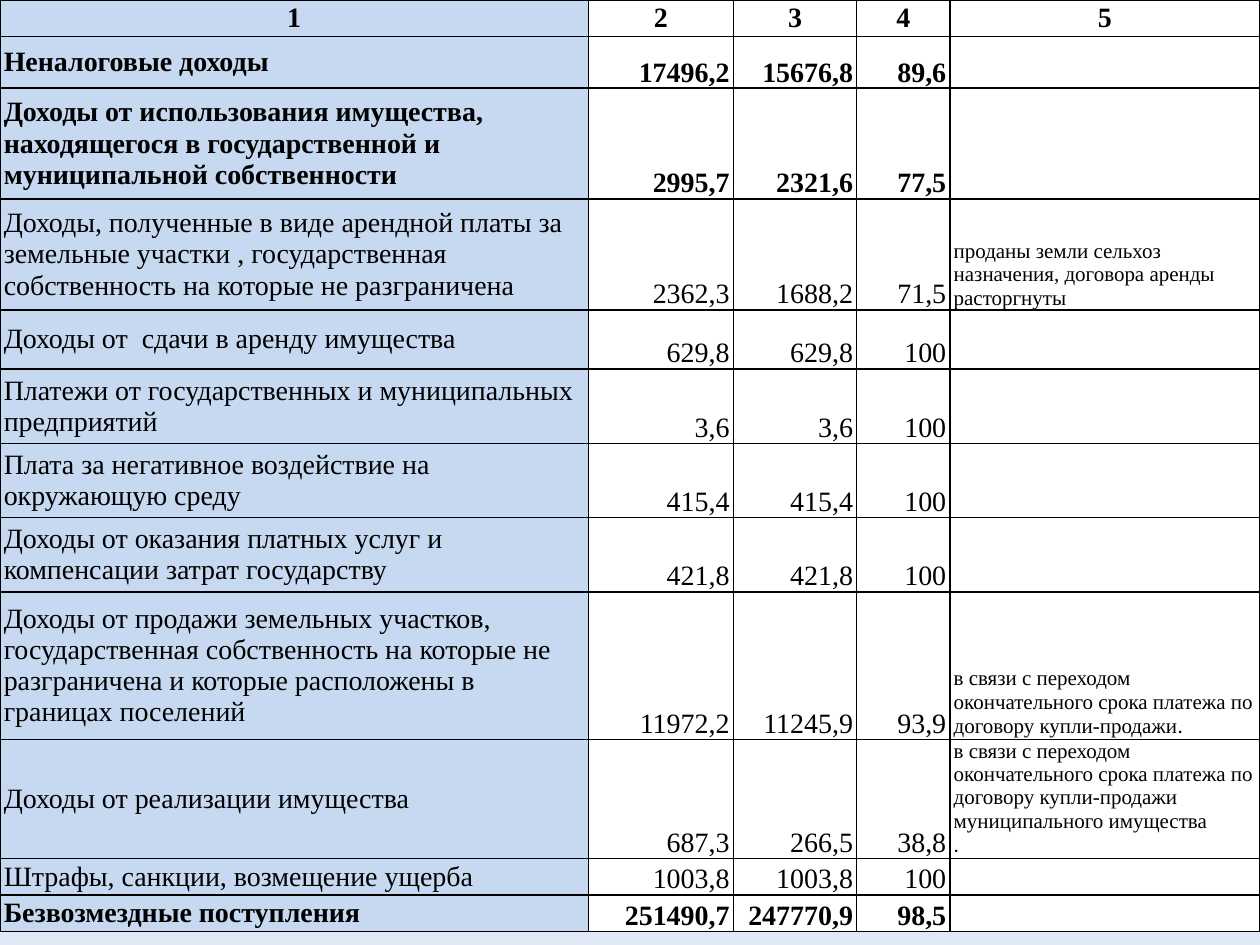
from lxml.etree import SubElement
from copy import deepcopy
from pptx import Presentation
from pptx.dml.color import RGBColor
from pptx.enum.text import MSO_ANCHOR, PP_ALIGN
from pptx.oxml.ns import qn
from pptx.util import Inches, Pt

BLACK = RGBColor(0x00, 0x00, 0x00)
WHITE = RGBColor(0xFF, 0xFF, 0xFF)
BLUE = RGBColor(0xC6, 0xD9, 0xF1)
SKY = [RGBColor(0x9A, 0xB5, 0xE4), RGBColor(0xC2, 0xD1, 0xED), RGBColor(0xE1, 0xE8, 0xF5)]
SERIF = "Times New Roman"
COLS = [4.67, 1.15, 0.98, 0.74, 2.46]
PAD = {"margin_left": Inches(0.03), "margin_right": Inches(0.03),
       "margin_top": 0, "margin_bottom": 0}
DELAY = "в связи с переходом окончательного срока платежа по договору купли-продажи"

ROWS = [
    (0.29, True, ["1", "2", "3", "4", "5"]),
    (0.41, True, ["Неналоговые доходы", "17496,2", "15676,8", "89,6", ""]),
    (0.88, True, ["Доходы от использования имущества, находящегося в государственной и "
                  "муниципальной собственности", "2995,7", "2321,6", "77,5", ""]),
    (0.88, False, ["Доходы, полученные в виде арендной платы за земельные участки , "
                   "государственная собственность на которые не разграничена",
                   "2362,3", "1688,2", "71,5",
                   "проданы земли сельхоз назначения, договора аренды расторгнуты"]),
    (0.47, False, ["Доходы от  сдачи в аренду имущества", "629,8", "629,8", "100", ""]),
    (0.59, False, ["Платежи от государственных и муниципальных предприятий",
                   "3,6", "3,6", "100", ""]),
    (0.59, False, ["Плата за негативное воздействие на окружающую среду",
                   "415,4", "415,4", "100", ""]),
    (0.59, False, ["Доходы от оказания платных услуг и компенсации затрат государству",
                   "421,8", "421,8", "100", ""]),
    (1.17, False, ["Доходы от продажи земельных участков, государственная собственность "
                   "на которые не разграничена и которые расположены в границах поселений",
                   "11972,2", "11245,9", "93,9", DELAY + "."]),
    (0.8, False, ["Доходы от реализации имущества", "687,3", "266,5", "38,8",
                  DELAY + " муниципального имущества\n."]),
    (0.29, False, ["Штрафы, санкции, возмещение ущерба", "1003,8", "1003,8", "100", ""]),
    (0.29, True, ["Безвозмездные поступления", "251490,7", "247770,9", "98,5", ""]),
]


def assign(item, values):
    for name, value in values.items():
        setattr(item, name, value)


def paint(slide):
    fill = slide.background.fill
    fill.gradient()
    fill.gradient_angle = 270
    first = next(slide.element.iter(qn("a:gs")))
    first.addnext(deepcopy(first))
    for stop, color, place in zip(fill.gradient_stops, SKY, (0, 0.5, 1)):
        stop.color.rgb = color
        stop.position = place


def border(cell):
    props = cell._tc.get_or_add_tcPr()
    for side in ("a:lnL", "a:lnR", "a:lnT", "a:lnB"):
        line = SubElement(props, qn(side), w=str(Pt(1)))
        solid = SubElement(line, qn("a:solidFill"))
        SubElement(solid, qn("a:srgbClr"), val=str(BLACK))


def write(cell, text, size, bold, align):
    frame = cell.text_frame
    for index, part in enumerate(text.split("\n")):
        para = frame.add_paragraph() if index else frame.paragraphs[0]
        para.alignment = align
        body = part.removesuffix(".")
        dot = part[len(body):]
        for words, face in ((body, SERIF), (dot, "Calibri")):
            if words:
                run = para.add_run()
                run.text = words
                assign(run.font, {"name": face, "size": Pt(size), "bold": bold})
                run.font.color.rgb = BLACK
        if not part:
            SubElement(para._p, qn("a:endParaRPr"), sz=str(size * 100))


def add_grid(slide, left, top, width, height):
    grid = slide.shapes.add_table(len(ROWS), len(COLS), left, top, width, height).table
    assign(grid, {"first_row": False, "horz_banding": False})
    for col, size in zip(grid.columns, COLS):
        col.width = Inches(size)
    for row, (tall, bold, texts) in enumerate(ROWS):
        grid.rows[row].height = Inches(tall)
        for col, text in enumerate(texts):
            cell = grid.cell(row, col)
            middle = row == 0 or col == 0
            assign(cell, PAD)
            cell.vertical_anchor = MSO_ANCHOR.MIDDLE if middle else MSO_ANCHOR.BOTTOM
            border(cell)
            cell.fill.solid()
            cell.fill.fore_color.rgb = WHITE if col else BLUE
            if row == 0:
                align = PP_ALIGN.CENTER
            else:
                align = PP_ALIGN.RIGHT if 0 < col < 4 else PP_ALIGN.LEFT
            write(cell, text, 12 if row and col == 4 else 16, bold, align)


def main():
    deck = Presentation()
    assign(deck, {"slide_width": Inches(10), "slide_height": Inches(7.5)})
    slide = deck.slides.add_slide(deck.slide_layouts[6])
    paint(slide)
    add_grid(slide, 0, 0, Inches(10), Inches(sum(row[0] for row in ROWS)))
    deck.save("out.pptx")


if __name__ == "__main__":
    main()
